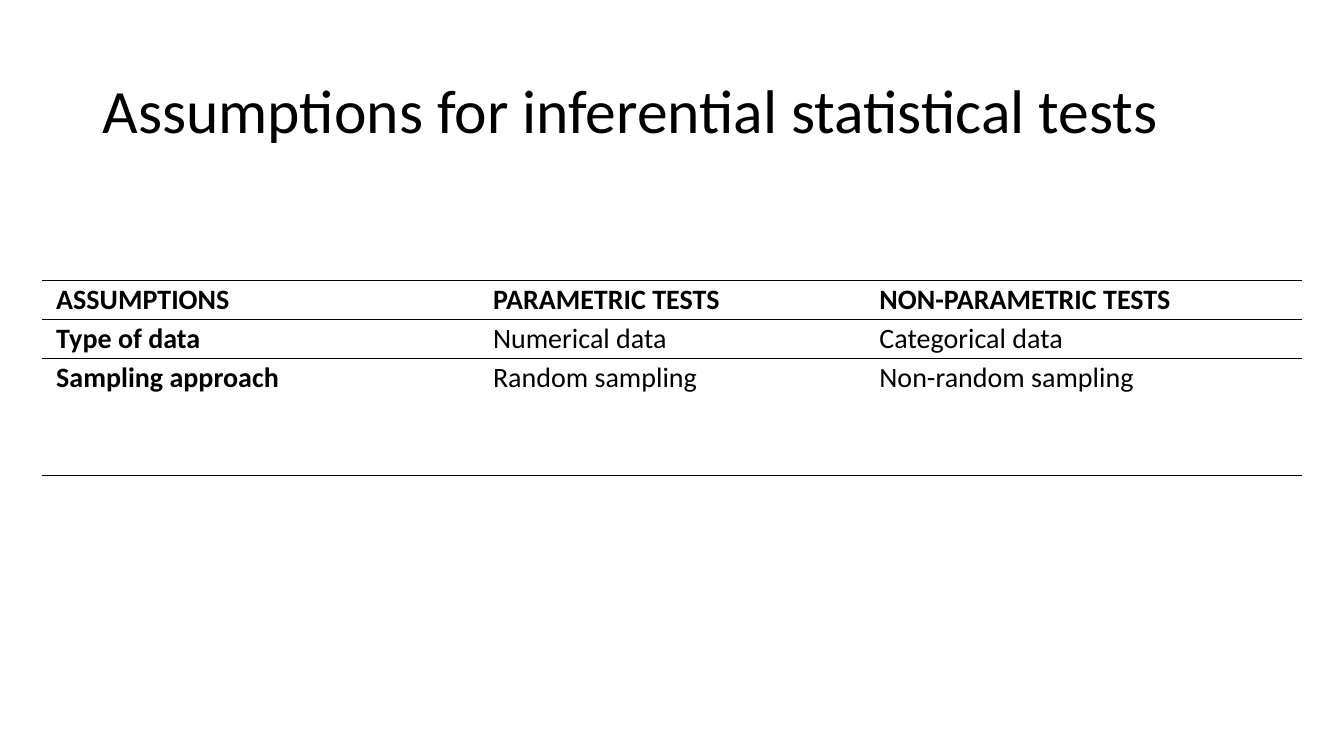
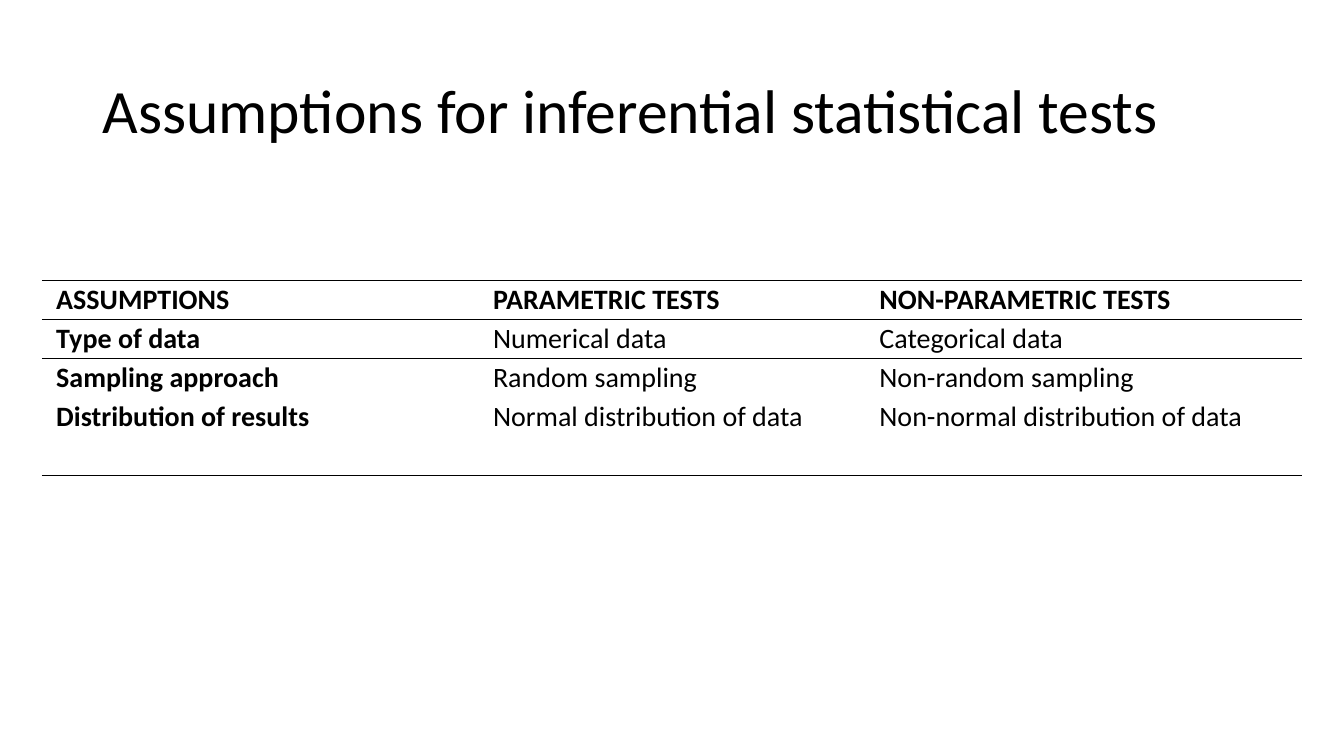
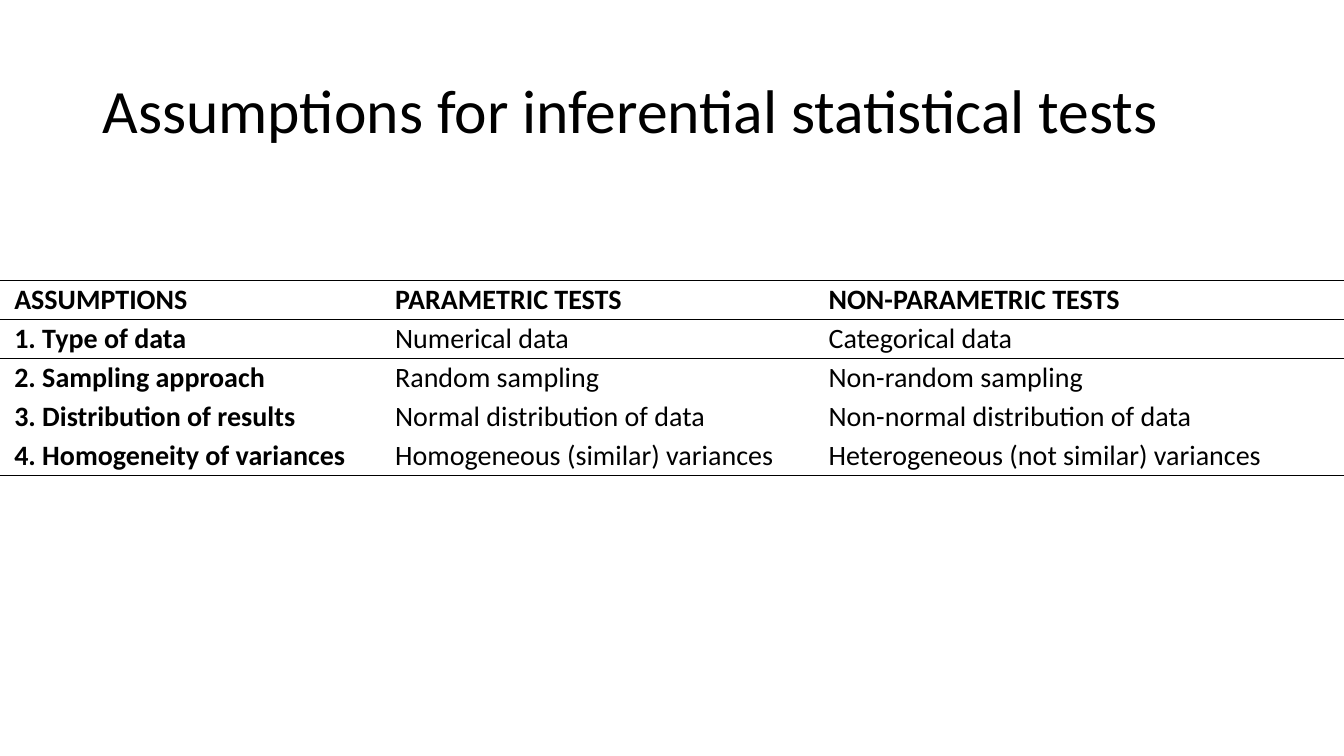
from dataclasses import dataclass

from lxml.etree import SubElement
from pptx import Presentation
from pptx.dml.color import RGBColor
from pptx.enum.text import MSO_ANCHOR, PP_ALIGN
from pptx.oxml.ns import qn
from pptx.util import Inches, Pt


@dataclass(frozen=True)
class Theme:
    font: str = "Calibri"
    ink: str = "000000"
    title_size: float = 44
    cell_size: float = 20
    title_spacing: float = 0.9
    cell_spacing: float = 1.07
    rule: float = 1
    inset: float = 0.34
    columns: int = 32
    rows: int = 18
    table_style: str = "{2D5ABB26-0587-4C30-8999-92F81FD0307C}"


class Deck:
    def __init__(self, theme):
        self.theme = theme
        self.prs = Presentation()
        self.prs.slide_width = Inches(13.33)
        self.prs.slide_height = Inches(7.5)
        self.s = None

    def x(self, columns):
        return round(columns * self.prs.slide_width / self.theme.columns)

    def y(self, rows):
        return round(rows * self.prs.slide_height / self.theme.rows)

    def style(self, p, size, spacing, bold=False):
        p.alignment = PP_ALIGN.LEFT
        p.line_spacing = spacing
        p.font.name = self.theme.font
        p.font.size = Pt(size)
        p.font.bold = bold
        p.font.color.rgb = RGBColor.from_string(self.theme.ink)

    def slide(self, title):
        self.s = self.prs.slides.add_slide(self.prs.slide_layouts[5])
        sp = self.s.shapes.title
        sp.left, sp.top = self.x(2.2), self.y(0.96)
        sp.width, sp.height = self.x(27.6), self.y(3.48)
        tf = sp.text_frame
        tf.text = title
        tf.vertical_anchor = MSO_ANCHOR.MIDDLE
        self.style(tf.paragraphs[0], self.theme.title_size, self.theme.title_spacing)

    def border(self, cell, side):
        tcPr = cell._tc.get_or_add_tcPr()
        ln = SubElement(tcPr, qn(f"a:ln{side}"), w=str(Pt(self.theme.rule)))
        fill = SubElement(ln, qn("a:solidFill"))
        SubElement(fill, qn("a:srgbClr"), val=self.theme.ink)

    def cell(self, cell, text, bold, sides):
        cell.margin_left = cell.margin_right = self.x(self.theme.inset)
        cell.margin_top = cell.margin_bottom = 0
        cell.vertical_anchor = MSO_ANCHOR.TOP
        cell.text = text
        self.style(cell.text_frame.paragraphs[0], self.theme.cell_size,
                   self.theme.cell_spacing, bold)
        for side in sides:
            self.border(cell, side)
        cell.fill.background()

    def table(self, left, top, widths, row_height, rows):
        frame = self.s.shapes.add_table(
            len(rows), len(widths), self.x(left), self.y(top),
            self.x(sum(widths)), self.y(row_height * len(rows)))
        table = frame.table
        table.first_row = table.horz_banding = False
        table._tbl.tblPr.find(qn("a:tableStyleId")).text = self.theme.table_style
        for column, width in zip(table.columns, widths):
            column.width = self.x(width)
        borders = {0: "TB", 1: "T", len(rows) - 1: "B"}
        for i, texts in enumerate(rows):
            table.rows[i].height = self.y(row_height)
            for j, text in enumerate(texts):
                self.cell(table.cell(i, j), text, i == 0 or j == 0, borders.get(i, ""))


TITLE = "Assumptions for inferential statistical tests"
HEADER = ("ASSUMPTIONS", "PARAMETRIC TESTS", "NON-PARAMETRIC TESTS")
ASSUMPTIONS = [
    ("Type of data", "Numerical data", "Categorical data"),
    ("Sampling approach", "Random sampling", "Non-random sampling"),
    ("Distribution of results", "Normal distribution of data",
     "Non-normal distribution of data"),
    ("Homogeneity of variances", "Homogeneous (similar) variances",
     "Heterogeneous (not similar) variances"),
]
INSET_COLUMNS = (10.4, 9.2, 10.4)
FULL_COLUMNS = (9.07, 10.32, 12.61)


def main():
    deck = Deck(Theme())
    blank = ("",) * len(HEADER)
    numbered = [(f"{n}. {name}", *tests)
                for n, (name, *tests) in enumerate(ASSUMPTIONS, 1)]
    for left, widths, rows in (
        (1, INSET_COLUMNS, ASSUMPTIONS[:2] + [blank] * 2),
        (1, INSET_COLUMNS, ASSUMPTIONS[:3] + [blank]),
        (0, FULL_COLUMNS, numbered),
    ):
        deck.slide(TITLE)
        deck.table(left, 6.67, widths, 0.93, [HEADER, *rows])
    deck.prs.save("out.pptx")


if __name__ == "__main__":
    main()
